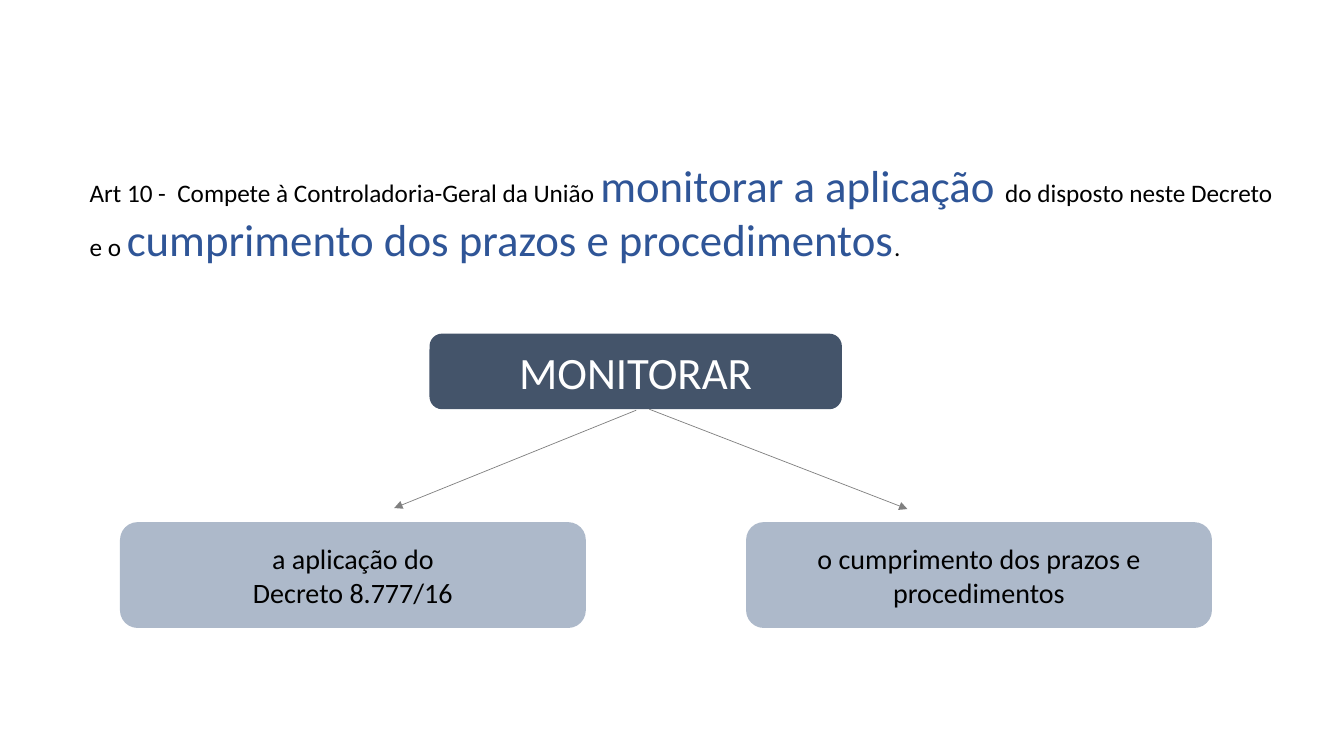
from dataclasses import dataclass

from pptx import Presentation
from pptx.dml.color import RGBColor
from pptx.enum.shapes import MSO_CONNECTOR as Connector, MSO_SHAPE as Shape
from pptx.enum.text import MSO_ANCHOR as Anchor, MSO_AUTO_SIZE as AutoSize, PP_ALIGN as Align
from pptx.oxml.xmlchemy import OxmlElement
from pptx.slide import Slide
from pptx.text.text import _Paragraph as Paragraph
from pptx.util import Emu, Pt

PX = 9144  # 100 px to the inch
FONT = "Calibri"

BLACK = RGBColor(0x00, 0x00, 0x00)
WHITE = RGBColor(0xFF, 0xFF, 0xFF)
BLUE = RGBColor(0x2F, 0x55, 0x97)
SLATE = RGBColor(0x44, 0x54, 0x6A)
PALE = RGBColor(0xAD, 0xB9, 0xCA)
GRAY = RGBColor(0x80, 0x80, 0x80)


@dataclass(frozen=True)
class Span:
    text: str
    size: int
    color: RGBColor


@dataclass(frozen=True)
class Node:
    left: int
    top: int
    width: int
    height: int
    fill: RGBColor
    lines: tuple[Span, ...]


@dataclass(frozen=True)
class Arrow:
    start: tuple[int, int]
    end: tuple[int, int]


ARTICLE = (
    Span("Art 10 -  Compete à Controladoria-Geral da União ", 18, BLACK),
    Span("monitorar a aplicação ", 32, BLUE),
    Span("do disposto neste Decreto e o ", 18, BLACK),
    Span("cumprimento dos prazos e procedimentos", 32, BLUE),
    Span(". ", 18, BLACK),
)

NODES = (
    Node(426, 331, 409, 75, SLATE, (Span("MONITORAR", 32, WHITE),)),
    Node(119, 518, 462, 105, PALE,
         (Span("a aplicação do", 20, BLACK), Span("Decreto 8.777/16", 20, BLACK))),
    Node(740, 518, 462, 105, PALE,
         (Span("o cumprimento dos prazos e procedimentos", 20, BLACK),)),
)

ARROWS = (
    Arrow((631, 407), (391, 504)),
    Arrow((644, 406), (900, 505)),
)


def px(*lengths: int) -> list[Emu]:
    return [Emu(length * PX) for length in lengths]


def add_span(para: Paragraph, span: Span) -> None:
    run = para.add_run()
    run.text = span.text
    for name, value in {"name": FONT, "size": Pt(span.size)}.items():
        setattr(run.font, name, value)
    run.font.color.rgb = span.color


def add_article(page: Slide) -> None:
    frame = page.shapes.add_textbox(*px(79, 152, 1194, 118)).text_frame
    for name, value in {"word_wrap": True, "auto_size": AutoSize.SHAPE_TO_FIT_TEXT}.items():
        setattr(frame, name, value)
    for span in ARTICLE:
        add_span(frame.paragraphs[0], span)


def add_node(page: Slide, node: Node) -> None:
    box = page.shapes.add_shape(
        Shape.ROUNDED_RECTANGLE, *px(node.left, node.top, node.width, node.height))
    box.shadow.inherit = False
    box.fill.solid()
    box.fill.fore_color.rgb = node.fill
    box.line.fill.background()
    frame = box.text_frame
    for name, value in {"word_wrap": True, "vertical_anchor": Anchor.MIDDLE}.items():
        setattr(frame, name, value)
    for index, span in enumerate(node.lines):
        para = frame.add_paragraph() if index else frame.paragraphs[0]
        para.alignment = Align.CENTER
        add_span(para, span)


def add_arrow(page: Slide, arrow: Arrow) -> None:
    connector = page.shapes.add_connector(
        Connector.STRAIGHT, *px(*arrow.start, *arrow.end))
    connector.line.color.rgb = GRAY
    connector.line.width = Pt(0.5)
    head = OxmlElement("a:tailEnd")
    head.set("type", "triangle")
    connector.line._get_or_add_ln().append(head)
    connector._element.spPr.append(OxmlElement("a:effectLst"))


def main() -> None:
    deck = Presentation()
    deck.slide_width, deck.slide_height = px(1333, 750)
    page = deck.slides.add_slide(deck.slide_layouts.get_by_name("Blank"))
    add_article(page)
    for node in NODES:
        add_node(page, node)
    for arrow in ARROWS:
        add_arrow(page, arrow)
    deck.save("out.pptx")


if __name__ == "__main__":
    main()
